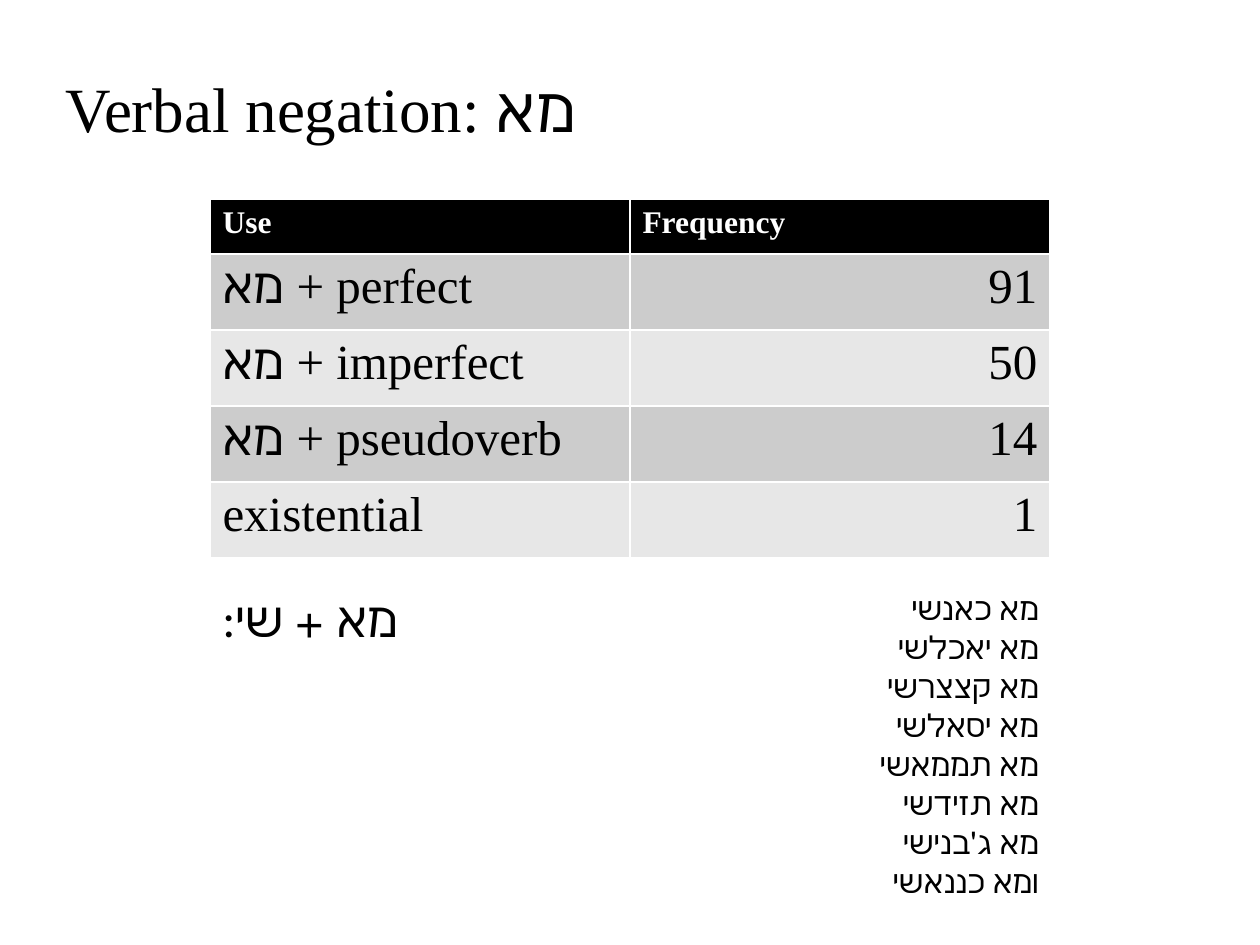
import pptx
import pptx.dml.color
import pptx.enum.text
import pptx.util

PX = 914400 // 126
ALIGN = pptx.enum.text.PP_ALIGN
ANCHOR = pptx.enum.text.MSO_ANCHOR
LATIN, HEBREW = "Times New Roman", "Calibri"
USES = [("מא", " + perfect", "91"), ("מא", " + imperfect", "50"),
        ("מא", " + pseudoverb", "14"), ("", "existential", "1")]
FORMS = ["מא כאנשי", "מא יאכלשי", "מא קצצרשי", "מא יסאלשי",
         "מא תממאשי", "מא תזידשי", "מא ג'בנישי", "ומא כננאשי"]


def px(*sizes):
    """Turn px lengths into EMU."""
    return [pptx.util.Emu(size * PX) for size in sizes]


def color(code):
    """Turn a hex string into a colour."""
    return pptx.dml.color.RGBColor.from_string(code)


def write(frame, runs, size, code="000000", bold=False, align=ALIGN.LEFT):
    """Fill the first paragraph with (text, font) runs."""
    line = frame.paragraphs[0]
    line.alignment = align
    look = {"size": pptx.util.Pt(size), "bold": bold}
    for text, face in runs:
        if text:
            run = line.add_run()
            run.text = text
            for key, value in {**look, "name": face}.items():
                setattr(run.font, key, value)
            run.font.color.rgb = color(code)
    return line


def paint(cell, code):
    """Give a cell a solid fill."""
    cell.fill.solid()
    cell.fill.fore_color.rgb = color(code)


def grid(slide, left, top, widths, heights):
    """Add a table with set columns and rows."""
    box = px(left, top, sum(widths), sum(heights))
    table = slide.shapes.add_table(len(heights), len(widths), *box).table
    for col, width in zip(table.columns, px(*widths)):
        col.width = width
    for row, height in zip(table.rows, px(*heights)):
        row.height = height
    table.horz_banding = False
    return table


def title(slide):
    """Place and write the title."""
    shape = slide.shapes.title
    shape.left, shape.top, shape.width, shape.height = px(53, 63, 1042, 89)
    shape.text_frame.vertical_anchor = ANCHOR.TOP
    write(shape.text_frame, [("Verbal negation: ", LATIN), ("מא", HEBREW)], 36)


def counts(slide):
    """Add the table of uses and their frequency."""
    table = grid(slide, 210, 199, [420, 420], [55] + [76] * len(USES))
    for col, head in enumerate(["Use", "Frequency"]):
        cell = table.cell(0, col)
        paint(cell, "000000")
        write(cell.text_frame, [(head, LATIN)], 18, "FFFFFF", True)
    for row, (word, use, count) in enumerate(USES, 1):
        name, value = table.cell(row, 0), table.cell(row, 1)
        for cell in (name, value):
            paint(cell, "CCCCCC" if row % 2 else "E7E7E7")
        write(name.text_frame, [(word, HEBREW), (use, LATIN)], 28)
        write(value.text_frame, [(count, LATIN)], 28, align=ALIGN.RIGHT)


def label(slide):
    """Add the heading of the list of forms."""
    frame = slide.shapes.add_textbox(*px(210, 582, 273, 72)).text_frame
    frame.word_wrap = True
    write(frame, [(":מא + שי", HEBREW)], 28)


def forms(slide):
    """Add the right-to-left list of forms."""
    table = grid(slide, 609, 588, [431], [39] * len(FORMS))
    table.first_row = False
    look = {"margin_left": PX, "margin_right": PX, "margin_top": PX,
            "margin_bottom": 0, "vertical_anchor": ANCHOR.BOTTOM}
    for row, form in enumerate(FORMS):
        cell = table.cell(row, 0)
        cell.fill.background()
        for key, value in look.items():
            setattr(cell, key, value)
        line = write(cell.text_frame, [(form, HEBREW)], 18, align=ALIGN.RIGHT)
        line._p.get_or_add_pPr().set("rtl", "1")


def main():
    """Build and save the slide."""
    deck = pptx.Presentation()
    deck.slide_width, deck.slide_height = px(1260, 945)
    slide = deck.slides.add_slide(deck.slide_layouts[5])
    for draw in (title, counts, label, forms):
        draw(slide)
    deck.save("out.pptx")


if __name__ == "__main__":
    main()
